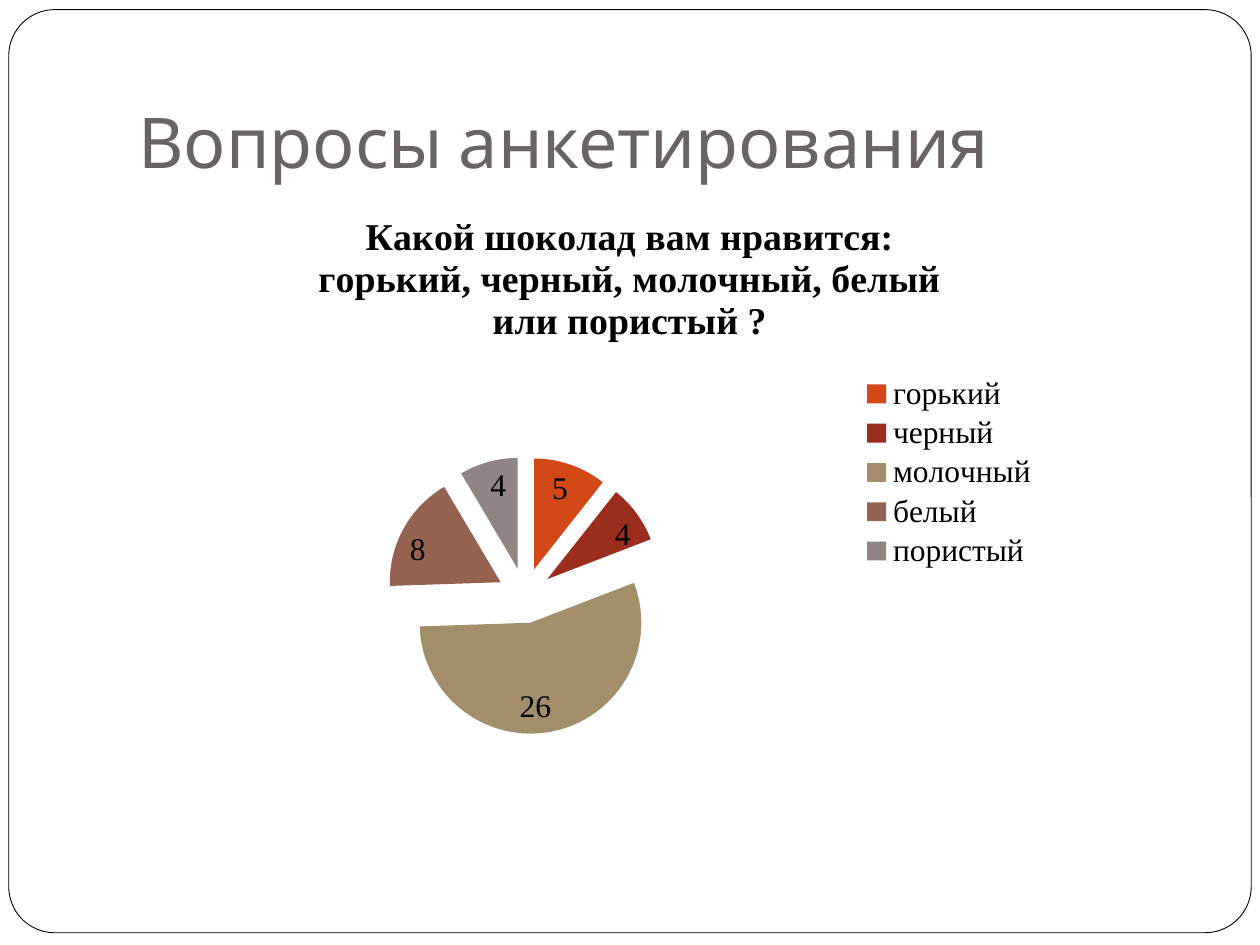
import pptx
import pptx.chart.data
import pptx.dml.color
import pptx.enum.chart
import pptx.enum.shapes
import pptx.enum.text
import pptx.oxml
import pptx.oxml.ns
import pptx.util

Pt = pptx.util.Pt
COLORS = {"white": "FFFFFF", "black": "000000", "title": "696464"}
ANSWERS = {
    "горький": (5, "D34817"),
    "черный": (4, "9B2D1F"),
    "молочный": (26, "A28E6A"),
    "белый": (8, "956251"),
    "пористый": (4, "918485"),
}
QUESTION = [
    "Какой шоколад вам нравится:",
    "горький, черный, молочный, белый или пористый ?",
]


def rgb(value):
    return pptx.dml.color.RGBColor.from_string(value)


def style_font(font, name, size, color, bold=False):
    font.name = name
    font.size = Pt(size)
    font.bold = bold
    font.color.rgb = rgb(color)


def add_frame(page):
    frame = page.shapes.add_shape(
        pptx.enum.shapes.MSO_SHAPE.ROUNDED_RECTANGLE, Pt(5), Pt(5.5), Pt(710), Pt(527.5)
    )
    frame.adjustments[0] = 0.05
    frame.shadow.inherit = False
    frame.fill.solid()
    frame.fill.fore_color.rgb = rgb(COLORS["white"])
    frame.line.color.rgb = rgb(COLORS["black"])
    frame.line.width = Pt(0.5)
    page.shapes._spTree.insert(2, frame._element)


def set_title(page, text):
    title = page.shapes.title
    title.left, title.top, title.width, title.height = Pt(72), Pt(21.6), Pt(612), Pt(90)
    text_frame = title.text_frame
    text_frame.text = text
    text_frame.vertical_anchor = pptx.enum.text.MSO_ANCHOR.BOTTOM
    text_frame.margin_bottom = Pt(7.2)
    para = text_frame.paragraphs[0]
    para.alignment = pptx.enum.text.PP_ALIGN.LEFT
    style_font(para.runs[0].font, "Cabin", 40, COLORS["title"])


def place_part(part, successors, inner=False, **fractions):
    for old in part.findall(pptx.oxml.ns.qn("c:layout")):
        part.remove(old)
    target = '<c:layoutTarget val="inner"/>' if inner else ""
    modes = "".join(f'<c:{key}Mode val="edge"/>' for key in "xy")
    values = "".join(f'<c:{key} val="{value}"/>' for key, value in fractions.items())
    layout = pptx.oxml.parse_xml(
        f'<c:layout {pptx.oxml.ns.nsdecls("c")}><c:manualLayout>'
        f"{target}{modes}{values}</c:manualLayout></c:layout>"
    )
    part.insert_element_before(layout, *successors)


def set_question(chart):
    chart.has_title = True
    text_frame = chart.chart_title.text_frame
    text_frame.text = "\n".join(QUESTION)
    for para in text_frame.paragraphs:
        style_font(para.runs[0].font, "Times New Roman", 21.6, COLORS["black"], True)
    chart.chart_title.include_in_layout = False


def color_slices(plot):
    plot.vary_by_categories = True
    series = plot.series[0]
    for index, (count, color) in enumerate(ANSWERS.values()):
        fill = series.points[index].format.fill
        fill.solid()
        fill.fore_color.rgb = rgb(color)
    explosion = pptx.oxml.parse_xml(
        f'<c:explosion {pptx.oxml.ns.nsdecls("c")} val="25"/>'
    )
    series._element.find(pptx.oxml.ns.qn("c:dPt")).addprevious(explosion)


def label_slices(plot):
    plot.has_data_labels = True
    labels = plot.data_labels
    labels.show_value = True
    labels.show_percentage = False
    labels.position = pptx.enum.chart.XL_LABEL_POSITION.INSIDE_END
    style_font(labels.font, "Times New Roman", 18, COLORS["black"])


def add_pie(page):
    data = pptx.chart.data.CategoryChartData()
    data.categories = list(ANSWERS)
    data.add_series(" ".join(QUESTION), [count for count, color in ANSWERS.values()])
    chart = page.shapes.add_chart(
        pptx.enum.chart.XL_CHART_TYPE.PIE, Pt(120), Pt(110), Pt(480), Pt(320), data
    ).chart
    style_font(chart.font, "Times New Roman", 18, COLORS["black"])
    set_question(chart)
    color_slices(chart.plots[0])
    label_slices(chart.plots[0])
    chart.has_legend = True
    chart.legend.position = pptx.enum.chart.XL_LEGEND_POSITION.RIGHT
    chart.legend.include_in_layout = False
    style_font(chart.legend.font, "Times New Roman", 18, COLORS["black"])
    place_part(
        chart.legend._element, ("c:overlay", "c:spPr", "c:txPr"), x=0.77, y=0.32, w=0.22, h=0.36
    )
    plot_area = chart.plots[0]._element.getparent()
    place_part(plot_area, ("c:pieChart",), inner=True, x=0.21, y=0.47, w=0.33, h=0.5)


def main():
    deck = pptx.Presentation()
    deck.slide_width, deck.slide_height = Pt(720), Pt(540)
    page = deck.slides.add_slide(deck.slide_layouts[5])
    add_frame(page)
    set_title(page, "Вопросы анкетирования")
    add_pie(page)
    deck.save("out.pptx")


if __name__ == "__main__":
    main()
